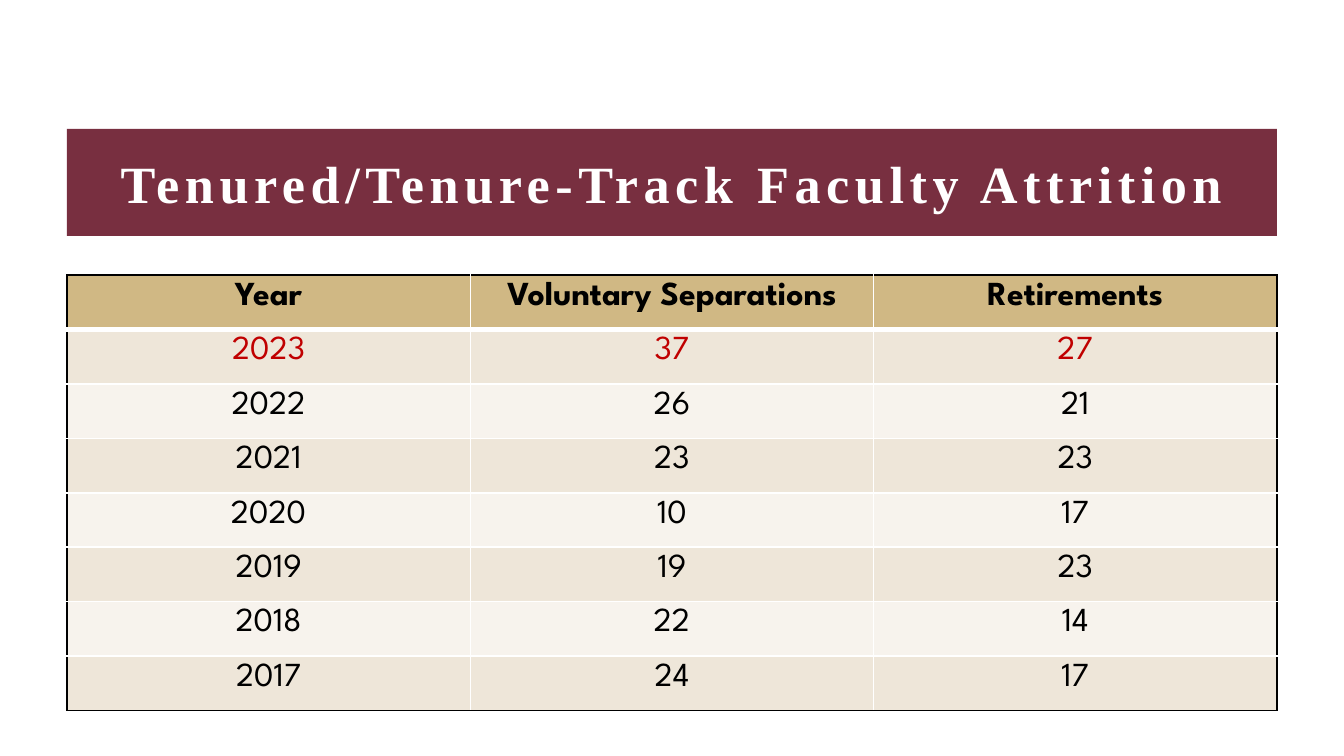
"""Build the faculty attrition slide: a title band above a table of yearly counts."""
import pptx
import pptx.dml.color
import pptx.enum.shapes
import pptx.enum.text
import pptx.oxml
import pptx.oxml.ns
import pptx.util

PX = 914400 / 134.4
BLACK, WHITE, RED = "000000", "FFFFFF", "C00000"
GARNET, GOLD, SAND, CREAM = "782F40", "D0B884", "EEE6D9", "F7F3ED"


def paint(fill, color):
    fill.solid()
    fill.fore_color.rgb = pptx.dml.color.RGBColor.from_string(color)


def write(frame, text, font, size, color, bold=False, spacing=0):
    paragraph = frame.paragraphs[0]
    paragraph.alignment = pptx.enum.text.PP_ALIGN.CENTER
    run = paragraph.add_run()
    run.text = text
    run.font.name = font
    run.font.size = pptx.util.Pt(size)
    run.font.bold = bold
    paint(run.font.fill, color)
    if spacing:
        run.font._element.set("spc", str(spacing * 100))


deck = pptx.Presentation()
deck.slide_width = round(1344 * PX)
deck.slide_height = round(756 * PX)
slide = deck.slides.add_slide(deck.slide_layouts[6])

left, width = round(67 * PX), round(1210 * PX)
banner = slide.shapes.add_shape(
    pptx.enum.shapes.MSO_SHAPE.RECTANGLE, left, round(129 * PX), width, round(107 * PX))
banner.shadow.inherit = False
banner.line.fill.background()
paint(banner.fill, GARNET)
banner.text_frame.word_wrap = True
banner.text_frame.vertical_anchor = pptx.enum.text.MSO_ANCHOR.MIDDLE
write(banner.text_frame, "Tenured/Tenure-Track Faculty Attrition",
      font="Times New Roman", size=28, color=WHITE, bold=True, spacing=3)

records = [
    ("Year", "Voluntary Separations", "Retirements"),
    ("2023", "37", "27"),
    ("2022", "26", "21"),
    ("2021", "23", "23"),
    ("2020", "10", "17"),
    ("2019", "19", "23"),
    ("2018", "22", "14"),
    ("2017", "24", "17"),
]
last_row, last_column = len(records) - 1, len(records[0]) - 1
attrition = slide.shapes.add_table(
    len(records), len(records[0]), left, round(275 * PX), width, round(436 * PX)).table

for row, record in enumerate(records):
    header = row == 0
    background = GOLD if header else SAND if row % 2 else CREAM
    for column, value in enumerate(record):
        cell = attrition.cell(row, column)
        paint(cell.fill, background)
        write(cell.text_frame, value, font="League Spartan", size=18,
              color=RED if row == 1 else BLACK, bold=header)
        borders = [
            ("lnL", column == 0, 1),
            ("lnR", column == last_column, 1),
            ("lnT", header, 3 if row == 1 else 1),
            ("lnB", row == last_row, 3 if header else 1),
        ]
        for position, (side, outer, points) in enumerate(borders):
            border = pptx.oxml.parse_xml(
                f'<a:{side} {pptx.oxml.ns.nsdecls("a")} w="{points * 12700}"><a:solidFill>'
                f'<a:srgbClr val="{BLACK if outer else WHITE}"/></a:solidFill></a:{side}>')
            cell._tc.get_or_add_tcPr().insert(position, border)

deck.save("out.pptx")
